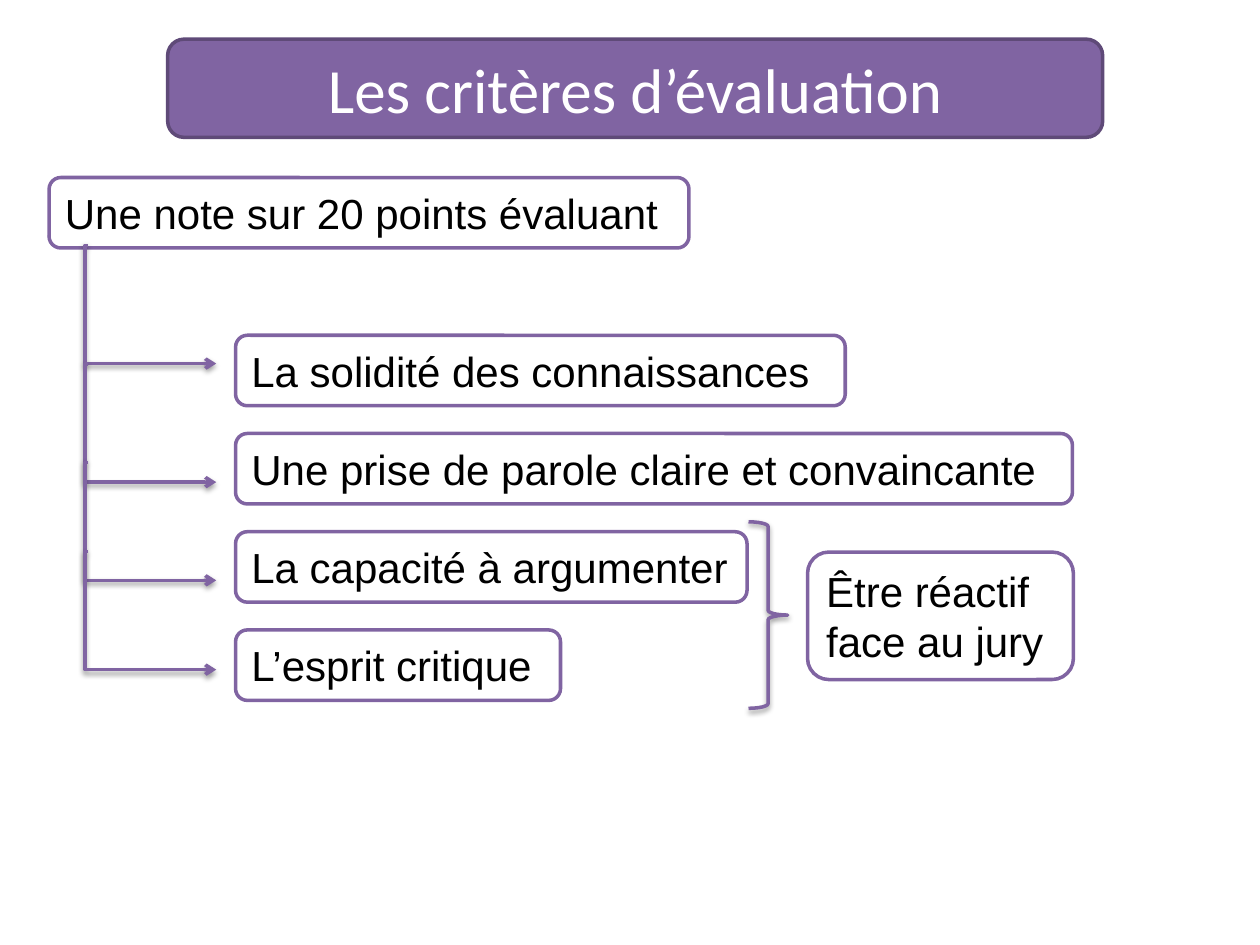
"""Build the slide on the evaluation criteria."""
from lxml import etree
from pptx import Presentation
from pptx.dml.color import RGBColor
from pptx.enum.shapes import MSO_CONNECTOR, MSO_SHAPE
from pptx.enum.text import MSO_ANCHOR, MSO_AUTO_SIZE, PP_ALIGN
from pptx.oxml import parse_xml
from pptx.oxml.ns import qn
from pptx.util import Cm, Pt

ROUND, BRACE = MSO_SHAPE.ROUNDED_RECTANGLE, MSO_SHAPE.RIGHT_BRACE
ELBOW = MSO_CONNECTOR.ELBOW
LEFT, CENTER = PP_ALIGN.LEFT, PP_ALIGN.CENTER
MIDDLE, GROW = MSO_ANCHOR.MIDDLE, MSO_AUTO_SIZE.SHAPE_TO_FIT_TEXT
PURPLE, DARK, WHITE, BLACK = "8064A2", "5F4A78", "FFFFFF", "000000"

TITLE = ("Les critères d’évaluation", (3.38, 0.79, 18.85, 1.98))
HEADING = ("Une note sur 20 points évaluant", (0.99, 3.58, 12.9, 1.42))
CRITERIA = [
    ("La solidité des connaissances", 12.29),
    ("Une prise de parole claire et convaincante", 16.87),
    ("La capacité à argumenter", 10.31),
    ("L’esprit critique", 6.55),
]
CRITERIA_LEFT, CRITERIA_TOP, CRITERIA_STEP, CRITERIA_HEIGHT = 4.75, 6.76, 1.98, 1.42
REACTION = ("Être réactif\nface au jury", (16.28, 11.13, 5.36, 2.57))
BRACE_BOX = (15.09, 10.52, 0.79, 3.76)
ARROW_STARTS = [4.95, 7.34, 9.32, 11.12]
ARROW_LEFT, ARROW_RIGHT, ARROW_DROP = 1.78, 4.36, 2.38
SHADOW = (
    '<a:effectLst xmlns:a="http://schemas.openxmlformats.org/drawingml/2006/main">'
    '<a:outerShdw blurRad="40000" dist="20000" dir="5400000" rotWithShape="0">'
    '<a:srgbClr val="000000"><a:alpha val="38000"/></a:srgbClr>'
    "</a:outerShdw></a:effectLst>"
)


def rgb(color):
    return RGBColor.from_string(color)


def set_line(sp, color=PURPLE):
    sp.line.color.rgb = rgb(color)
    sp.line.width = Pt(2)


def add_text(sp, text, size=24, font="Arial", color=BLACK, align=LEFT):
    tf = sp.text_frame
    tf.word_wrap = True
    tf.auto_size = GROW
    tf.vertical_anchor = MIDDLE
    for i, line in enumerate(text.split("\n")):
        p = tf.add_paragraph() if i else tf.paragraphs[0]
        p.alignment = align
        r = p.add_run()
        r.text = line
        r.font.size = Pt(size)
        r.font.name = font
        r.font.color.rgb = rgb(color)


def add_box(s, text, box, fill=WHITE, line=PURPLE, **fmt):
    sp = s.shapes.add_shape(ROUND, *map(Cm, box))
    sp.shadow.inherit = False
    sp.fill.solid()
    sp.fill.fore_color.rgb = rgb(fill)
    set_line(sp, line)
    add_text(sp, text, **fmt)


def add_brace(s, box):
    sp = s.shapes.add_shape(BRACE, *map(Cm, box))
    sp.adjustments[0] = 0.12
    sp.fill.background()
    set_line(sp)
    sp.element.spPr.append(parse_xml(SHADOW))


def add_arrow(s, top):
    sp = s.shapes.add_connector(
        ELBOW, Cm(ARROW_LEFT), Cm(top), Cm(ARROW_RIGHT), Cm(top + ARROW_DROP)
    )
    set_line(sp)
    spPr = sp.element.spPr
    guides = spPr.find(qn("a:prstGeom")).find(qn("a:avLst"))
    etree.SubElement(guides, qn("a:gd"), name="adj1", fmla="val -2400")
    etree.SubElement(spPr.find(qn("a:ln")), qn("a:tailEnd"), type="arrow")
    spPr.append(parse_xml(SHADOW))


def main():
    prs = Presentation()
    prs.slide_width, prs.slide_height = Cm(25.4), Cm(19.05)
    s = prs.slides.add_slide(prs.slide_layouts[6])
    add_box(s, *TITLE, fill=PURPLE, line=DARK,
            size=36, font="Calibri", color=WHITE, align=CENTER)
    add_box(s, *HEADING)
    for i, (text, width) in enumerate(CRITERIA):
        top = CRITERIA_TOP + i * CRITERIA_STEP
        add_box(s, text, (CRITERIA_LEFT, top, width, CRITERIA_HEIGHT))
    add_brace(s, BRACE_BOX)
    add_box(s, *REACTION)
    for top in ARROW_STARTS:
        add_arrow(s, top)
    prs.save("out.pptx")


if __name__ == "__main__":
    main()
